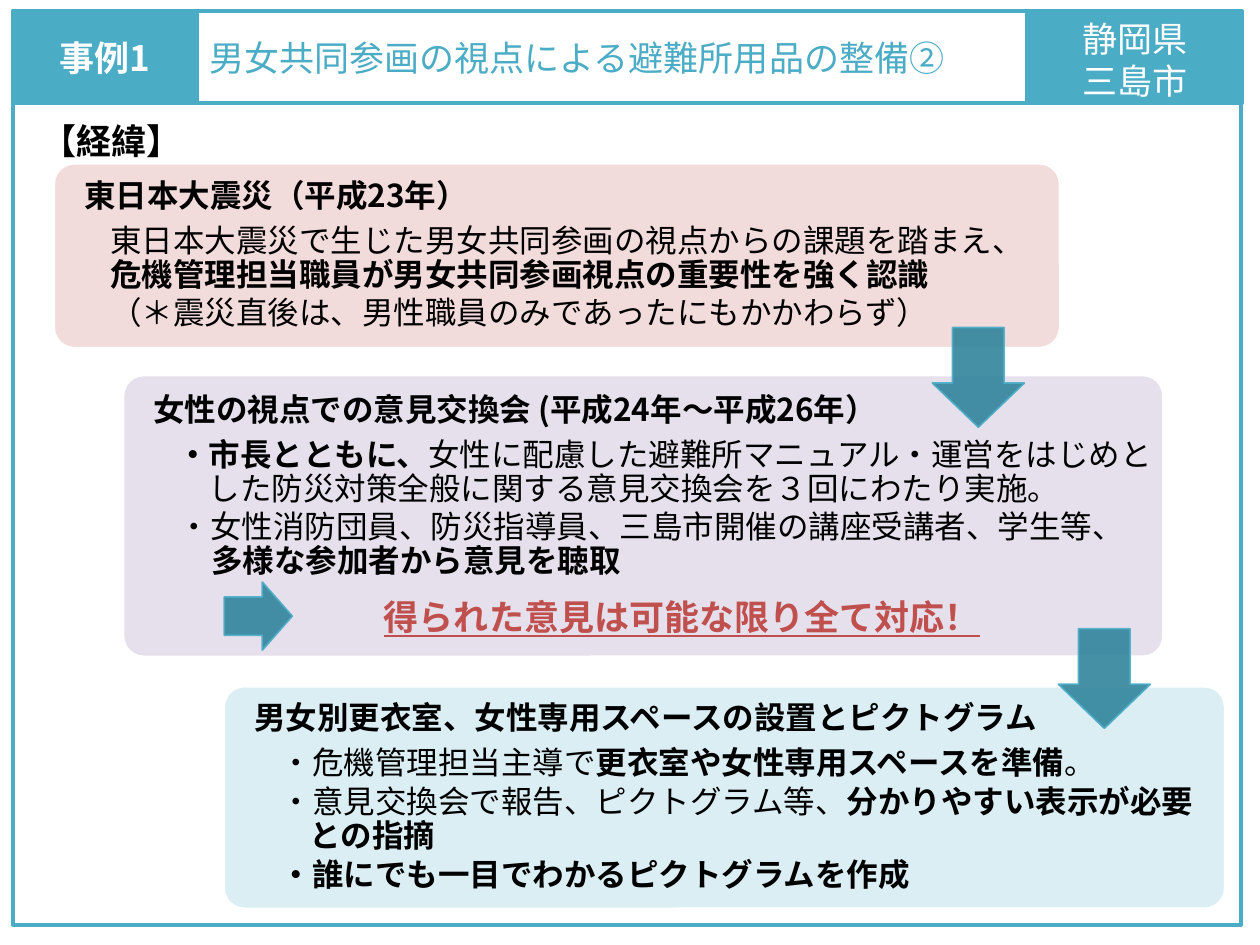
"""Build a slide tracing how a city equipped its shelters for women and men."""
from lxml import etree
from pptx import Presentation
from pptx.dml.color import RGBColor
from pptx.enum.shapes import MSO_SHAPE
from pptx.enum.text import MSO_ANCHOR, PP_ALIGN
from pptx.oxml.ns import qn
from pptx.util import Inches, Pt

RECT, ROUND = MSO_SHAPE.RECTANGLE, MSO_SHAPE.ROUNDED_RECTANGLE
DOWN, RIGHT = MSO_SHAPE.DOWN_ARROW, MSO_SHAPE.RIGHT_ARROW
MIDDLE, LEFT, CENTER = MSO_ANCHOR.MIDDLE, PP_ALIGN.LEFT, PP_ALIGN.CENTER
FONT = "Noto Sans CJK JP"
TEAL = RGBColor(0x4B, 0xAC, 0xC6)
DEEP = RGBColor(0x31, 0x85, 0x9C)
PINK = RGBColor(0xF2, 0xDC, 0xDB)
LILAC = RGBColor(0xE6, 0xE0, 0xEC)
AQUA = RGBColor(0xDB, 0xEE, 0xF4)
RED = RGBColor(0xC0, 0x50, 0x4D)
WHITE = RGBColor(255, 255, 255)
BLACK = RGBColor(0, 0, 0)
CORNER = 0.16

FRAME = (0.1, 0.09, 9.75, 7.25)
TITLE = ("男女共同参画の視点による避難所用品の整備②", (1.56, 0.09, 8.29, 0.73))
TABS = [
    (["事例1"], (0.1, 0.09, 1.46, 0.73), True, 0.05),
    (["静岡県", "三島市"], (8.15, 0.09, 1.71, 0.73), False, 0.08),
]
HEAD = ("【経緯】", (0.23, 0.9, 8.32, 0.44))
STEPS = [
    ("東日本大震災（平成23年）", (0.43, 1.3, 7.98, 1.46), PINK, [
        (0.4, 0, [("東日本大震災で生じた男女共同参画の視点からの課題を踏まえ、", False),
                  ("危機管理担当職員が男女共同参画視点の重要性を強く認識", True)]),
        (0.4, 0, [("（＊震災直後は、男性職員のみであったにもかかわらず）", False)]),
    ], None),
    ("女性の視点での意見交換会 (平成24年〜平成26年）", (0.98, 2.98, 8.25, 2.23), LILAC, [
        (0.63, -0.25, [("・市長とともに、", True),
                       ("女性に配慮した避難所マニュアル・運営をはじめとした"
                        "防災対策全般に関する意見交換会を３回にわたり実施。", False)]),
        (0.65, -0.26, [("・女性消防団員、防災指導員、三島市開催の講座受講者、学生等、", False),
                       ("多様な参加者から意見を聴取", True)]),
    ], "得られた意見は可能な限り全て対応！"),
    ("男女別更衣室、女性専用スペースの設置とピクトグラム", (1.78, 5.45, 7.94, 1.76), AQUA, [
        (0.4, 0, [("・危機管理担当主導で", False),
                  ("更衣室や女性専用スペースを準備", True), ("。", False)]),
        (0.63, -0.23, [("・意見交換会で報告、ピクトグラム等、", False),
                       ("分かりやすい表示が必要との指摘", True)]),
        (0.4, 0, [("・誰にでも一目でわかるピクトグラムを作成", True)]),
    ], None),
]
ARROWS = [
    (DOWN, (7.4, 2.6, 0.73, 0.79), 0.48),
    (RIGHT, (1.78, 4.62, 0.54, 0.54), 0.44),
    (DOWN, (8.4, 4.99, 0.73, 0.79), 0.48),
]


def write(par, text, size=18, color=BLACK, bold=False, line=False):
    run = par.add_run()
    run.text = text
    font = run.font
    font.name, font.size, font.bold = FONT, Pt(size), bold
    font.color.rgb = color
    if line:
        font.underline = True
    etree.SubElement(font._element, qn("a:ea"), typeface=FONT)


def layout(par, left, hang=0, after=2.7, before=0):
    par.alignment = LEFT
    par.line_spacing = 0.9
    par.space_after, par.space_before = Pt(after), Pt(before)
    props = par._p.get_or_add_pPr()
    props.set("marL", str(Inches(left)))
    props.set("indent", str(Inches(hang)))


def draw(slide, kind, box, fill=None, line=TEAL, width=2.25):
    shape = slide.shapes.add_shape(kind, *map(Inches, box))
    shape.shadow.inherit = False
    if fill is None:
        shape.fill.background()
    else:
        shape.fill.solid()
        shape.fill.fore_color.rgb = fill
    shape.line.color.rgb = line
    shape.line.width = Pt(width)
    return shape


def inset(frame, left, top, right, bottom):
    frame.margin_left, frame.margin_top = Inches(left), Inches(top)
    frame.margin_right, frame.margin_bottom = Inches(right), Inches(bottom)
    frame.vertical_anchor = MIDDLE
    frame.word_wrap = True


def add_title(slide):
    text, box = TITLE
    title = slide.shapes.title
    title.left, title.top, title.width, title.height = map(Inches, box)
    title.line.color.rgb = TEAL
    title.line.width = Pt(2.25)
    inset(title.text_frame, 0.1, 0.05, 0.1, 0.05)
    par = title.text_frame.paragraphs[0]
    par.alignment = LEFT
    write(par, text, size=20, color=TEAL)


def add_step(slide, head, box, fill, items, note):
    shape = draw(slide, ROUND, box, fill, WHITE, 1)
    shape.adjustments[0] = CORNER / box[3]
    frame = shape.text_frame
    inset(frame, 0, 0.05, 0.03, 0.05)
    par = frame.paragraphs[0]
    layout(par, 0.19, after=6.3)
    write(par, head, bold=True)
    for left, hang, runs in items:
        par = frame.add_paragraph()
        layout(par, left, hang)
        for text, bold in runs:
            write(par, text, bold=bold)
    if note:
        par = frame.add_paragraph()
        layout(par, 2.02, before=9)
        write(par, note, size=20, color=RED, bold=True, line=True)


def add_arrow(slide, kind, box, tip):
    shape = draw(slide, kind, box, DEEP, TEAL, 1)
    shape.adjustments[0], shape.adjustments[1] = 0.56, tip
    for color in shape._element.spPr.iter(qn("a:srgbClr")):
        etree.SubElement(color, qn("a:alpha"), val="90000")


def main():
    deck = Presentation()
    deck.slide_width, deck.slide_height = Inches(10), Inches(7.5)
    slide = deck.slides.add_slide(deck.slide_layouts[5])
    draw(slide, RECT, FRAME)
    add_title(slide)
    for step in STEPS:
        add_step(slide, *step)
    for lines, box, bold, top in TABS:
        frame = draw(slide, RECT, box, TEAL).text_frame
        inset(frame, 0.1, top, 0.1, 0.05)
        for i, text in enumerate(lines):
            par = frame.add_paragraph() if i else frame.paragraphs[0]
            par.alignment = CENTER
            write(par, text, size=20, color=WHITE, bold=bold)
    for arrow in ARROWS:
        add_arrow(slide, *arrow)
    text, box = HEAD
    frame = slide.shapes.add_textbox(*map(Inches, box)).text_frame
    frame.word_wrap = True
    write(frame.paragraphs[0], text, size=20, bold=True)
    deck.save("out.pptx")


if __name__ == "__main__":
    main()
